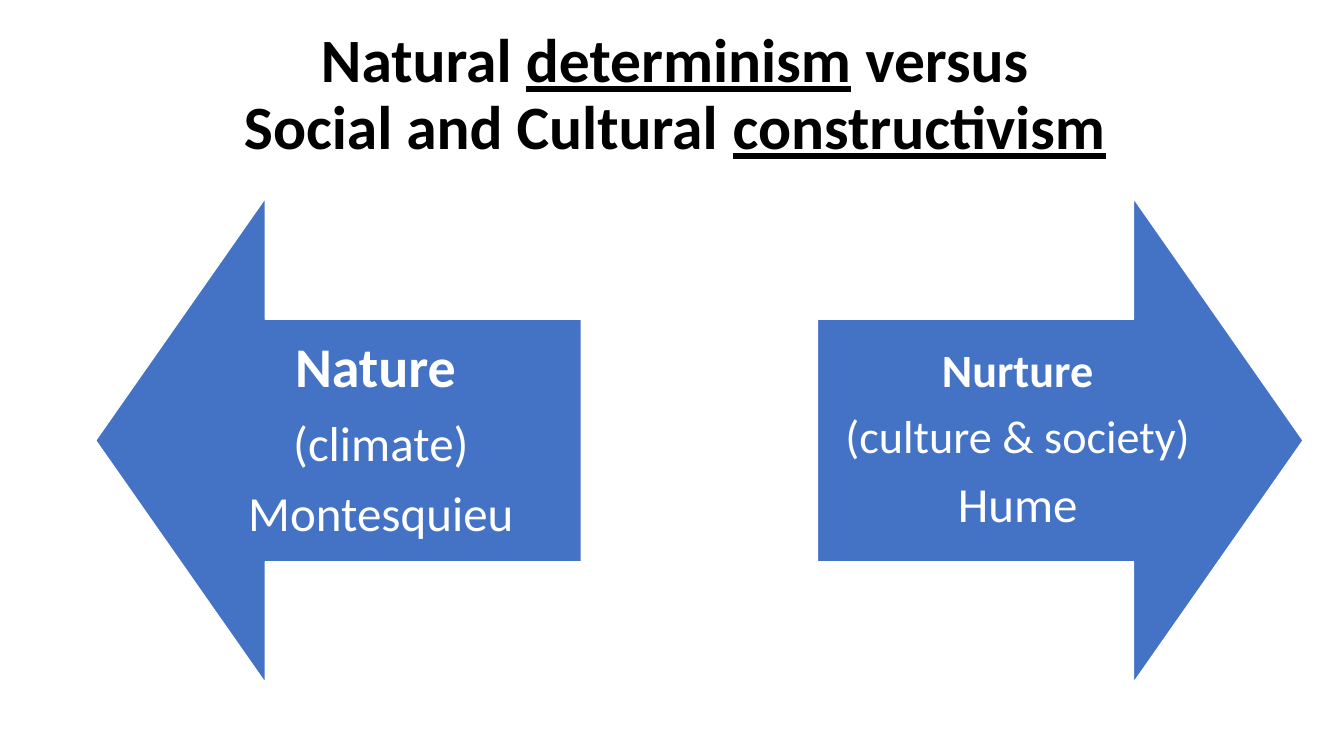
from pptx import Presentation
from pptx.dml.color import RGBColor
from pptx.enum.shapes import MSO_SHAPE
from pptx.enum.text import MSO_ANCHOR, PP_ALIGN
from pptx.util import Cm, Pt

LEFT_ARROW, RIGHT_ARROW = MSO_SHAPE.LEFT_ARROW, MSO_SHAPE.RIGHT_ARROW
MIDDLE, CENTER = MSO_ANCHOR.MIDDLE, PP_ALIGN.CENTER
BLACK, WHITE, BLUE = "000000", "FFFFFF", "4472C4"
FONT = "Calibri"
SHAFT, HEAD = 0.5, 0.35
SPACE_AFTER = 0.35

TITLE = [
    [("Natural ", False), ("determinism", True), (" versus", False)],
    [("Social and Cultural ", False), ("constructivism", True)],
]
NATURE = [
    [("Nature", 40, True), (" ", 35, False)],
    [("(climate)", 35, False)],
    [("Montesquieu", 35, False)],
]
NURTURE = [
    [("Nurture", 33, True)],
    [("(culture & society)", 33, False)],
    [("Hume", 35, False)],
]


def color(value):
    """Return the colour for a hex string."""
    return RGBColor.from_string(value)


def set_all(target, values):
    """Set every attribute named in a dict of format values."""
    for name, value in values.items():
        setattr(target, name, value)


def add_frame(page, box, margin_x, margin_y):
    """Add a wrapped, middle-anchored text box and return its frame."""
    frame = page.shapes.add_textbox(*(Cm(length) for length in box)).text_frame
    set_all(frame, {
        "word_wrap": True, "vertical_anchor": MIDDLE,
        "margin_left": Cm(margin_x), "margin_right": Cm(margin_x),
        "margin_top": Cm(margin_y), "margin_bottom": Cm(margin_y),
    })
    return frame


def add_span(para, text, size, ink, **extra):
    """Add one formatted run to a paragraph."""
    span = para.add_run()
    span.text = text
    set_all(span.font, {"name": FONT, "size": Pt(size), **extra})
    span.font.color.rgb = color(ink)


def add_title(page, box):
    """Write the two-line title with its key words underlined."""
    para = add_frame(page, box, 0.25, 0.13).paragraphs[0]
    set_all(para, {"alignment": CENTER, "line_spacing": 0.9})
    for index, line in enumerate(TITLE):
        if index:
            para.add_line_break()
        for text, underline in line:
            add_span(para, text, 44, BLACK, bold=True, underline=underline)


def add_arrow(page, box, preset, lines, margin):
    """Draw a block arrow and its caption over the shaft and half the head."""
    left, top, width, height = box
    arrow = page.shapes.add_shape(preset, *(Cm(length) for length in box))
    arrow.shadow.inherit = False
    arrow.adjustments[0], arrow.adjustments[1] = SHAFT, HEAD
    arrow.fill.solid()
    arrow.fill.fore_color.rgb = color(BLUE)
    arrow.line.color.rgb = color(WHITE)
    arrow.line.width = Pt(1)

    half_head = width * HEAD / 2
    text_left = left + half_head if preset == LEFT_ARROW else left
    text_top = top + height * (1 - SHAFT) / 2
    text_box = (text_left, text_top, width - half_head, height * SHAFT)
    frame = add_frame(page, text_box, margin, margin)
    for index, line in enumerate(lines):
        para = frame.add_paragraph() if index else frame.paragraphs[0]
        set_all(para, {
            "alignment": CENTER, "line_spacing": 0.9,
            "space_after": Pt(line[0][1] * SPACE_AFTER),
        })
        for text, size, bold in line:
            add_span(para, text, size, WHITE, bold=bold)


def main():
    """Build the slide and save the deck."""
    deck = Presentation()
    set_all(deck, {"slide_width": Cm(33.87), "slide_height": Cm(19.05)})
    page = deck.slides.add_slide(deck.slide_layouts[6])
    add_title(page, (0.71, 0.43, 32.59, 3.99))
    add_arrow(page, (2.41, 4.99, 12.24, 12.22), LEFT_ARROW, NATURE, 0.79)
    add_arrow(page, (20.6, 4.99, 12.24, 12.22), RIGHT_ARROW, NURTURE, 0.66)
    deck.save("out.pptx")


if __name__ == "__main__":
    main()
